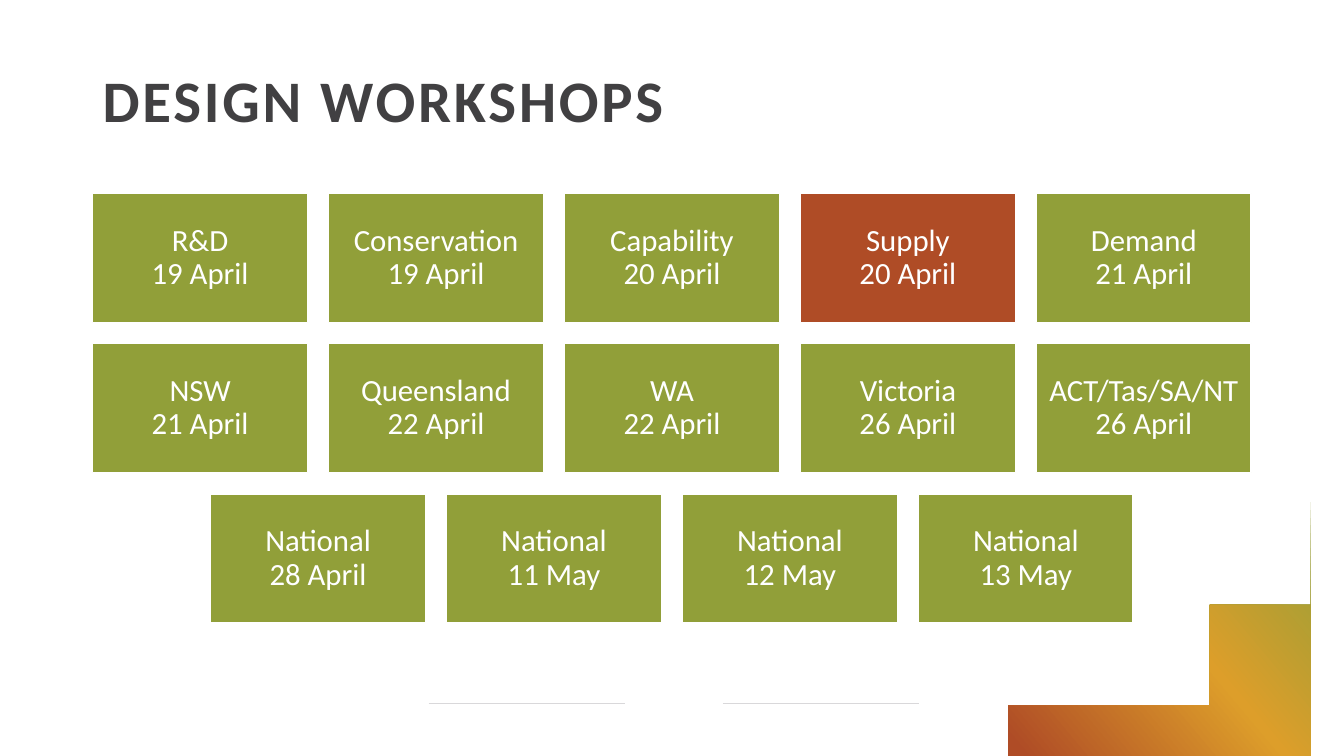
import copy
import math

from pptx import Presentation, util as u
from pptx.dml.color import RGBColor
from pptx.enum import shapes, text
from pptx.oxml.ns import qn
from lxml import etree


def colour(hex_value):
    return RGBColor.from_string(hex_value)


class WorkshopSlide:
    """Slide with a tile grid and the style shared by its elements."""

    font = "Calibri"
    green, orange, rust = "919F39", "DD9E2A", "AF4C26"
    white, ink, rule_grey = "FFFFFF", "414042", "D9D8DA"
    left, top = 0.92, 1.92
    column, row = 2.34, 1.49
    tile_size = 2.13, 1.28

    def __init__(self, deck):
        self.width, self.height = deck.slide_width.inches, deck.slide_height.inches
        self.shapes = deck.slides.add_slide(deck.slide_layouts[6]).shapes

    def add_words(self, paragraph, words, size, ink, bold=False):
        run = paragraph.add_run()
        run.text = words
        run.font.name, run.font.size, run.font.bold = self.font, u.Pt(size), bold
        run.font.color.rgb = colour(ink)
        return run

    def title(self, words):
        heading = self.shapes.add_textbox(*map(u.Inches, (self.left, 0.66, 11.5, 1.02)))
        heading.text_frame.word_wrap = True
        paragraph = heading.text_frame.paragraphs[0]
        paragraph.line_spacing = 0.9
        run = self.add_words(paragraph, words, 42, self.ink, True)
        run.font._element.set("spc", "200")

    def rule(self, start, end, y):
        footer_rule = self.shapes.add_connector(
            shapes.MSO_CONNECTOR.STRAIGHT, *map(u.Inches, (start, y, end, y)))
        footer_rule.line.color.rgb = colour(self.rule_grey)
        footer_rule.line.width = u.Pt(0.5)
        etree.SubElement(footer_rule._element.spPr, qn("a:effectLst"))

    def corner(self, radius, steps=90):
        centre_x, centre_y = self.width - radius, self.height - radius
        angles = [math.pi / 2 * step / steps for step in range(steps + 1)]
        arc = [(centre_x + radius * math.cos(a), centre_y + radius * math.sin(a))
               for a in angles]
        outline = self.shapes.build_freeform(self.width, self.height, scale=u.Inches(1))
        outline.add_line_segments(arc, close=True)
        swoosh = outline.convert_to_shape()
        swoosh.shadow.inherit = False
        swoosh.line.fill.background()
        swoosh.fill.gradient()
        swoosh.fill.gradient_angle = 220
        stop_list = swoosh._element.spPr.find(".//" + qn("a:gsLst"))
        stop_list.append(copy.deepcopy(stop_list[0]))
        blend = (0.12, self.green), (0.5, self.orange), (0.91, self.rust)
        for stop, (position, shade) in zip(swoosh.fill.gradient_stops, blend):
            stop.position = position
            stop.color.rgb = colour(shade)

    def tile(self, column, row, theme, date, fill):
        place = self.left + column * self.column, self.top + row * self.row
        workshop = self.shapes.add_shape(
            shapes.MSO_SHAPE.RECTANGLE, *map(u.Inches, place + self.tile_size))
        workshop.shadow.inherit = False
        workshop.fill.solid()
        workshop.fill.fore_color.rgb = colour(fill)
        workshop.line.color.rgb = colour(self.white)
        workshop.line.width = u.Pt(1)
        frame = workshop.text_frame
        frame.word_wrap = True
        frame.vertical_anchor = text.MSO_ANCHOR.MIDDLE
        frame.margin_left = frame.margin_right = u.Inches(0.09)
        frame.margin_top = frame.margin_bottom = u.Inches(0.09)
        paragraph = frame.paragraphs[0]
        paragraph.alignment = text.PP_ALIGN.CENTER
        paragraph.line_spacing = 0.9
        self.add_words(paragraph, theme, 22, self.white)
        paragraph.add_line_break()
        self.add_words(paragraph, date, 22, self.white)


def main():
    deck = Presentation()
    deck.slide_width, deck.slide_height = u.Inches(13.33), u.Inches(7.5)
    slide = WorkshopSlide(deck)
    for start in (4.25, 7.17):
        slide.rule(start, start + 1.95, 6.98)
    slide.corner(3.18)
    slide.title("DESIGN WORKSHOPS")

    schedule = [
        [("R&D", "19 April"), ("Conservation", "19 April"), ("Capability", "20 April"),
         ("Supply", "20 April"), ("Demand", "21 April")],
        [("NSW", "21 April"), ("Queensland", "22 April"), ("WA", "22 April"),
         ("Victoria", "26 April"), ("ACT/Tas/SA/NT", "26 April")],
        [("National", date) for date in ("28 April", "11 May", "12 May", "13 May")],
    ]
    columns = max(map(len, schedule))
    for row, workshops in enumerate(schedule):
        indent = (columns - len(workshops)) / 2
        for column, (theme, date) in enumerate(workshops):
            fill = slide.rust if theme == "Supply" else slide.green
            slide.tile(column + indent, row, theme, date, fill)
    deck.save("out.pptx")


if __name__ == "__main__":
    main()
